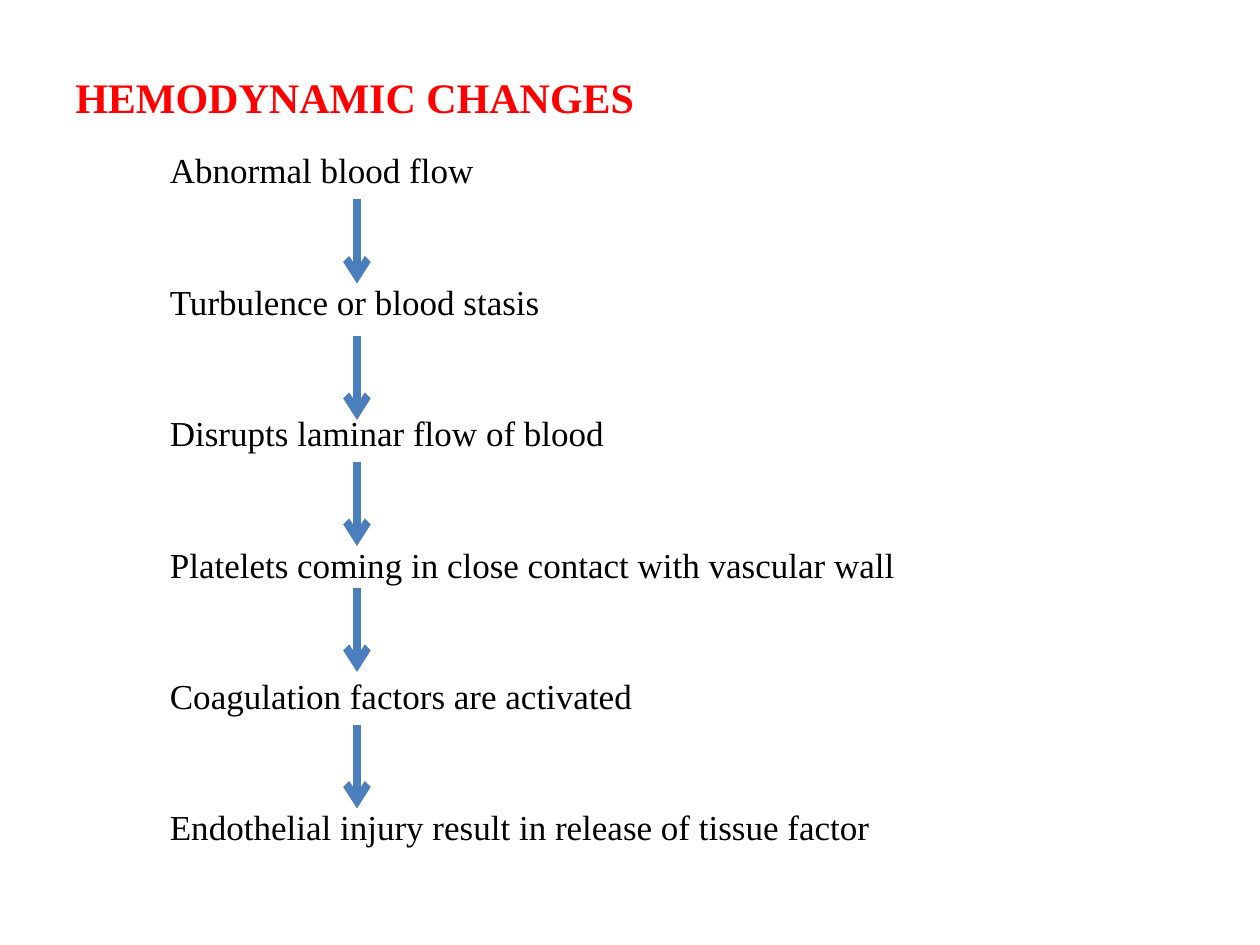
from dataclasses import dataclass

import lxml.etree
import pptx
import pptx.dml.color
import pptx.enum.shapes
import pptx.enum.text
import pptx.oxml.ns
import pptx.slide
import pptx.util

EMU_PER_PX = 7620
FONT_NAME = "Times New Roman"
ARROW_X = 340
ARROW_LENGTH = 80
ARROW_TOPS = (190, 320, 440, 560, 690)
STEPS = [
    "Abnormal blood flow",
    "Turbulence or blood stasis",
    "Disrupts laminar flow of blood",
    "Platelets coming in close contact with vascular wall",
    "Coagulation factors are activated",
    "Endothelial injury result in release of tissue factor",
]


@dataclass
class TextBlock:
    left: int
    top: int
    width: int
    height: int
    lines: list[str]
    anchor: pptx.enum.text.MSO_ANCHOR
    size: int
    color: str
    bold: bool
    line_spacing: float
    gap: float = 0


def px(length: int) -> pptx.util.Emu:
    return pptx.util.Emu(length * EMU_PER_PX)


def rgb(color: str) -> pptx.dml.color.RGBColor:
    return pptx.dml.color.RGBColor.from_string(color)


def apply_format(target: object, values: dict[str, object]) -> None:
    for name, value in values.items():
        setattr(target, name, value)


def draw_text(slide: pptx.slide.Slide, block: TextBlock) -> None:
    shape = slide.shapes.add_textbox(
        px(block.left), px(block.top), px(block.width), px(block.height)
    )
    frame = shape.text_frame
    apply_format(frame, {
        "word_wrap": True,
        "vertical_anchor": block.anchor,
        "margin_left": px(12),
        "margin_right": px(12),
        "margin_top": px(6),
        "margin_bottom": px(6),
        "text": "\n".join(block.lines),
    })
    for index, paragraph in enumerate(frame.paragraphs):
        apply_format(paragraph, {
            "line_spacing": block.line_spacing,
            "space_before": pptx.util.Pt(block.gap if index else 0),
        })
        apply_format(paragraph.font, {
            "name": FONT_NAME,
            "size": pptx.util.Pt(block.size),
            "bold": block.bold,
        })
        paragraph.font.color.rgb = rgb(block.color)


def draw_arrow(slide: pptx.slide.Slide, top: int) -> None:
    connector = slide.shapes.add_connector(
        pptx.enum.shapes.MSO_CONNECTOR.STRAIGHT,
        px(ARROW_X), px(top), px(ARROW_X), px(top + ARROW_LENGTH),
    )
    connector.line.width = pptx.util.Pt(4.5)
    connector.line.color.rgb = rgb("4B7EBC")
    line = connector.line._get_or_add_ln()
    lxml.etree.SubElement(line, pptx.oxml.ns.qn("a:tailEnd"), type="arrow")
    properties = connector._element.spPr
    lxml.etree.SubElement(properties, pptx.oxml.ns.qn("a:effectLst"))


def main() -> None:
    presentation = pptx.Presentation()
    apply_format(presentation, {"slide_width": px(1200), "slide_height": px(900)})
    slide = presentation.slides.add_slide(presentation.slide_layouts[6])
    anchors = pptx.enum.text.MSO_ANCHOR
    title = TextBlock(60, 36, 1080, 64, ["HEMODYNAMIC CHANGES"],
                      anchors.MIDDLE, 24, "FF0000", True, 2.0)
    steps = TextBlock(150, 120, 900, 720, STEPS,
                      anchors.TOP, 20, "000000", False, 1.4, 41.5)
    for block in (title, steps):
        draw_text(slide, block)
    for top in ARROW_TOPS:
        draw_arrow(slide, top)
    presentation.save("out.pptx")


if __name__ == "__main__":
    main()
